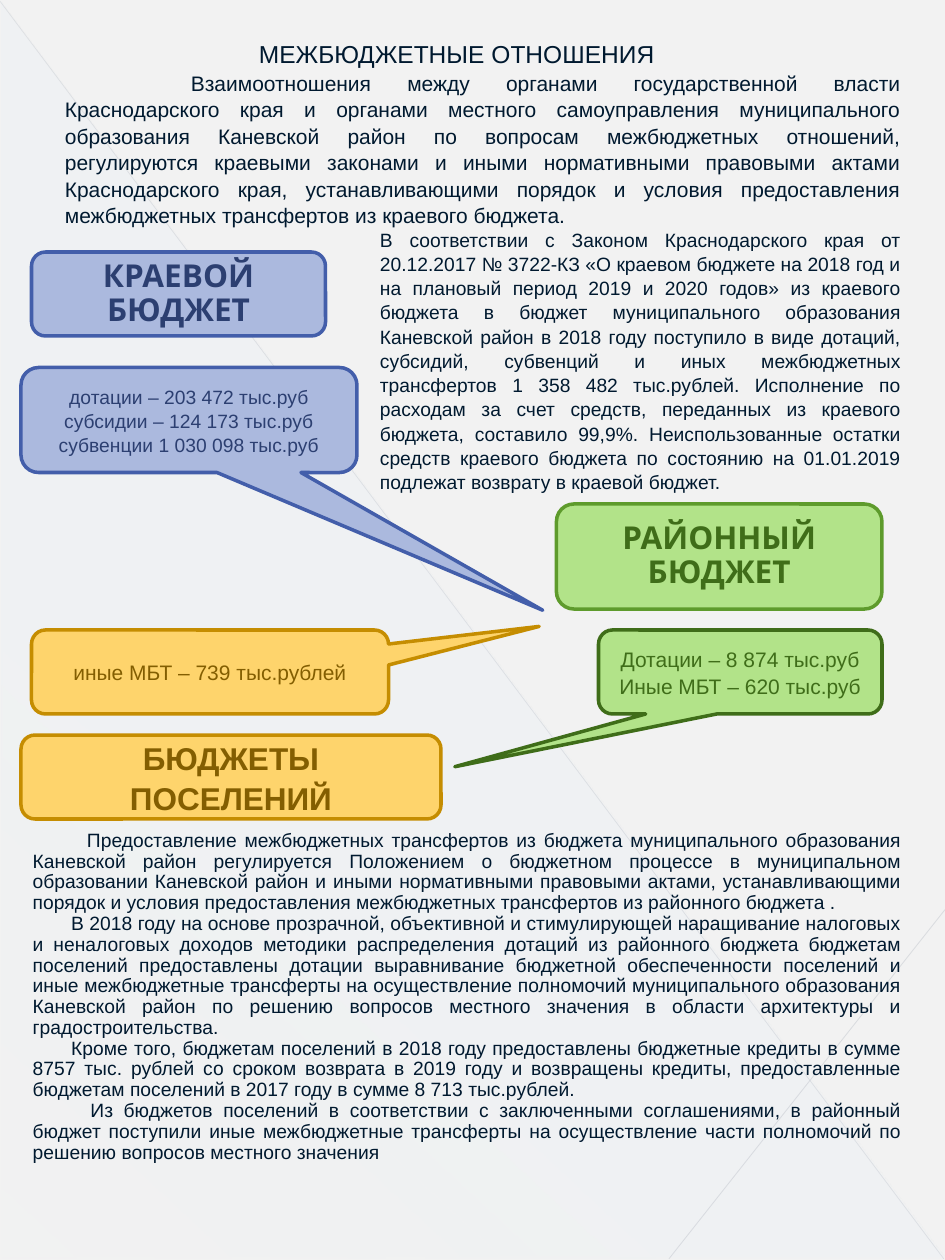
from lxml import etree
from pptx import Presentation
from pptx.dml.color import RGBColor
from pptx.enum.shapes import MSO_CONNECTOR, MSO_SHAPE
from pptx.enum.text import MSO_ANCHOR, MSO_AUTO_SIZE, PP_ALIGN
from pptx.oxml import parse_xml
from pptx.oxml.ns import nsdecls, qn
from pptx.util import Pt

LINE = MSO_CONNECTOR.STRAIGHT
TRI = MSO_SHAPE.RIGHT_TRIANGLE
ROUND = MSO_SHAPE.ROUNDED_RECTANGLE
PROC = MSO_SHAPE.FLOWCHART_ALTERNATE_PROCESS
CALL = MSO_SHAPE.ROUNDED_RECTANGULAR_CALLOUT
MID, GROW = MSO_ANCHOR.MIDDLE, MSO_AUTO_SIZE.SHAPE_TO_FIT_TEXT
MIDX, JUST = PP_ALIGN.CENTER, PP_ALIGN.JUSTIFY

HUES = {
    "back": "F2F2F2", "sky": "D6ECFF", "ray": "B7BCC5", "ray2": "BFC3CB", "ink": "00192F",
    "blue": "ABB9DE", "blue_rim": "435EAA", "blue_ink": "2C3F71",
    "green": "B2E389", "green_rim": "5E9B2C", "green_ink": "3F6D19",
    "gold": "FED46C", "gold_rim": "C58D01", "gold_ink": "835E01",
}


def hue(name):
    return RGBColor.from_string(HUES[name])


def write(frame, paras, size, ink, align=MIDX, lead=1.05, face="Arial", bold=False, dents=()):
    frame.word_wrap = True
    for i, text in enumerate(paras):
        para = frame.paragraphs[0] if i == 0 else frame.add_paragraph()
        para.alignment, para.line_spacing = align, lead
        if dents:
            para._p.get_or_add_pPr().set("indent", str(Pt(dents[i])))
        run = para.add_run()
        run.text = text
        for key, val in {"size": Pt(size), "name": face, "bold": bold}.items():
            setattr(run.font, key, val)
        run.font.color.rgb = hue(ink)


deck = Presentation()
deck.slide_width, deck.slide_height = Pt(540), Pt(720)
slide = deck.slides.add_slide(deck.slide_layouts[6])
slide.background.fill.solid()
slide.background.fill.fore_color.rgb = hue("back")
shapes = slide.shapes

# Backdrop: faint triangle and rays
tri = shapes.add_shape(TRI, Pt(0.7), Pt(1.4), Pt(539.3), Pt(717.8))
tri.shadow.inherit = False
tri.line.fill.background()
stops = "".join(
    f'<a:gs pos="{pos * 1000}"><a:srgbClr val="{HUES["sky"]}">'
    f'<a:alpha val="{alpha * 1000}"/></a:srgbClr></a:gs>'
    for pos, alpha in [(0, 10), (70, 8), (100, 1)])
tri._element.spPr.find(qn("a:prstGeom")).addnext(parse_xml(
    f'<a:gradFill {nsdecls("a")}><a:gsLst>{stops}</a:gsLst>'
    f'<a:lin ang="{133 * 60000}" scaled="0"/></a:gradFill>'))

for x1, y1, x2, y2, tone, wide, alpha in [
    (0, 0.7, 539.3, 719.3, "ray", 0.39, 35),
    (540, 519.8, 382.3, 719.3, "ray2", 0.47, 45),
]:
    ray = shapes.add_connector(LINE, Pt(x1), Pt(y1), Pt(x2), Pt(y2))
    ray.line.color.rgb, ray.line.width = hue(tone), Pt(wide)
    props = ray._element.spPr
    etree.SubElement(props.find(".//" + qn("a:srgbClr")), qn("a:alpha"), val=str(alpha * 1000))
    etree.SubElement(props, qn("a:effectLst"))

# Title and running text
for x, y, w, h, size, align, dent, text in [
    (126, 18, 270, 24.2, 14, MIDX, 0, "МЕЖБЮДЖЕТНЫЕ ОТНОШЕНИЯ"),
    (30, 36, 492, 94.5, 12, JUST, 72,
     "Взаимоотношения между органами государственной власти Краснодарского края и органами "
     "местного самоуправления муниципального образования Каневской район по вопросам "
     "межбюджетных отношений, регулируются краевыми законами и иными нормативными правовыми "
     "актами Краснодарского края, устанавливающими порядок и условия предоставления "
     "межбюджетных трансфертов из краевого бюджета."),
    (210, 126, 312, 154, 11, JUST, 0,
     "В соответствии с Законом Краснодарского края от 20.12.2017 № 3722-КЗ «О краевом бюджете "
     "на 2018 год и на плановый период 2019 и 2020 годов» из краевого бюджета в бюджет "
     "муниципального образования Каневской район в 2018 году поступило в виде дотаций, "
     "субсидий, субвенций и иных межбюджетных трансфертов 1 358 482 тыс.рублей. Исполнение по "
     "расходам за счет средств, переданных из краевого бюджета, составило 99,9%. "
     "Неиспользованные остатки средств краевого бюджета по состоянию на 01.01.2019 "
     "подлежат возврату в краевой бюджет."),
]:
    box = shapes.add_textbox(Pt(x), Pt(y), Pt(w), Pt(h))
    write(box.text_frame, [text], size, "ink", align, dents=[dent])
    box.text_frame.auto_size = GROW

# Budgets and the transfers between them
head = {"size": 18, "bold": True}
brand = {**head, "face": "League Spartan", "lead": 0.9}
for kind, x, y, w, h, turn, adj, fill, rim, ink, paras, look in [
    (PROC, 318, 288, 186, 60, 0, (), "green", "green_rim", "green_ink",
     ["РАЙОННЫЙ БЮДЖЕТ"], brand),
    (ROUND, 18, 144, 168, 48, 0, (), "blue", "blue_rim", "blue_ink",
     ["КРАЕВОЙ", "БЮДЖЕТ"], brand),
    (CALL, 78, 144, 60, 192, 270, (-1.812, 1.053, 0.167), "blue", "blue_rim", "blue_ink",
     ["дотации – 203 472 тыс.руб", "субсидии – 124 173 тыс.руб",
      "субвенции 1 030 098 тыс.руб"], {"size": 11}),
    (PROC, 12, 420, 240, 48, 0, (), "gold", "gold_rim", "gold_ink",
     ["БЮДЖЕТЫ ПОСЕЛЕНИЙ"], head),
    (CALL, 342, 360, 162, 48, 0, (-1.007, 1.128, 0.167), "green", "green_ink", "green_ink",
     ["Дотации – 8 874 тыс.руб", "Иные МБТ – 620 тыс.руб"], {"size": 12}),
    (CALL, 18, 360, 204, 48, 0, (0.922, -0.543, 0.167), "gold", "gold_rim", "gold_ink",
     ["иные МБТ – 739 тыс.рублей"], {"size": 12}),
]:
    card = shapes.add_shape(kind, Pt(x), Pt(y), Pt(w), Pt(h))
    card.shadow.inherit = False
    card.rotation = turn
    for i, val in enumerate(adj):
        card.adjustments[i] = val
    card.fill.solid()
    card.fill.fore_color.rgb = hue(fill)
    card.line.color.rgb, card.line.width = hue(rim), Pt(2)
    frame = card.text_frame
    frame.vertical_anchor = MID
    write(frame, paras, ink=ink, **look)
    if turn:
        frame._txBody.bodyPr.set("vert", "vert")

# Closing text in a one-cell table
table = shapes.add_table(1, 1, Pt(18), Pt(474), Pt(498), Pt(183)).table
table.first_row = table.horz_banding = False
cell = table.cell(0, 0)
cell.fill.background()
for key, val in {"left": 0.7, "top": 0.7, "right": 0.7, "bottom": 0}.items():
    setattr(cell, "margin_" + key, Pt(val))
for side in ("lnL", "lnR", "lnT", "lnB"):
    edge = parse_xml(f'<a:{side} {nsdecls("a")} w="0"><a:noFill/></a:{side}>')
    cell._tc.tcPr.find(qn("a:noFill")).addprevious(edge)
write(cell.text_frame, [
    "Предоставление межбюджетных трансфертов из бюджета муниципального образования Каневской "
    "район регулируется Положением о бюджетном процессе в муниципальном образовании Каневской "
    "район и иными нормативными правовыми актами, устанавливающими порядок и условия "
    "предоставления межбюджетных трансфертов из районного бюджета .",
    "В 2018 году на основе прозрачной, объективной и стимулирующей наращивание налоговых и "
    "неналоговых доходов методики распределения дотаций из районного бюджета бюджетам "
    "поселений предоставлены дотации выравнивание бюджетной обеспеченности поселений и иные "
    "межбюджетные трансферты на осуществление полномочий муниципального образования Каневской "
    "район по решению вопросов местного значения в области архитектуры и градостроительства.",
    "Кроме того, бюджетам поселений в 2018 году предоставлены бюджетные кредиты в сумме 8757 "
    "тыс. рублей со сроком возврата в 2019 году и возвращены кредиты, предоставленные бюджетам "
    "поселений в 2017 году в сумме 8 713 тыс.рублей.",
    "Из бюджетов поселений в соответствии с заключенными соглашениями, в районный бюджет "
    "поступили иные межбюджетные трансферты на осуществление части полномочий по решению "
    "вопросов местного значения",
], 11, "ink", JUST, 0.97, dents=[31, 22, 22, 33])

deck.save("out.pptx")
